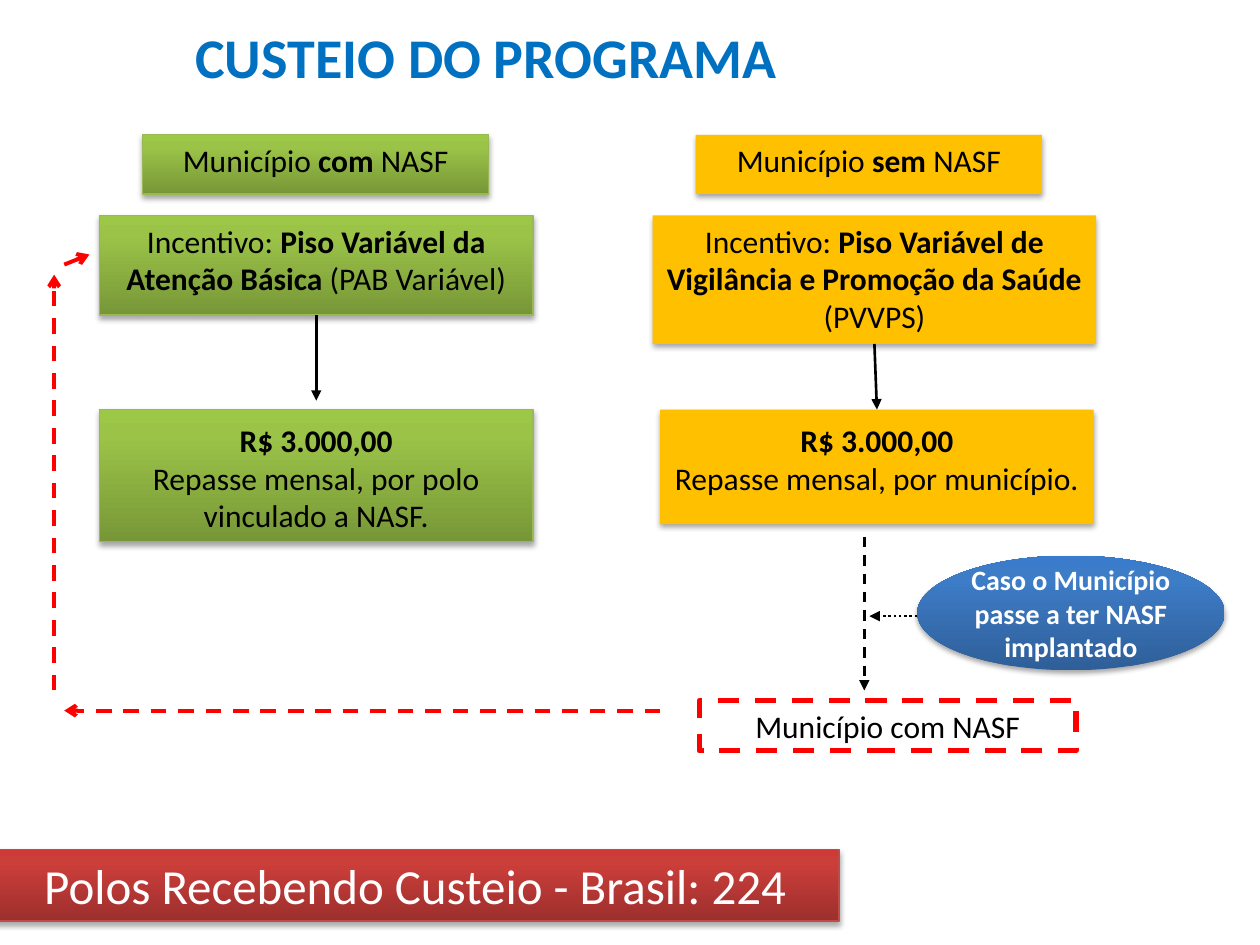
from copy import deepcopy

from pptx import Presentation
from pptx.dml.color import RGBColor
from pptx.enum.dml import MSO_LINE
from pptx.enum.shapes import MSO_CONNECTOR, MSO_SHAPE
from pptx.enum.text import MSO_ANCHOR, PP_ALIGN
from pptx.oxml import parse_xml
from pptx.oxml.ns import nsdecls, qn
from pptx.util import Inches, Pt

RECT, OVAL = MSO_SHAPE.RECTANGLE, MSO_SHAPE.OVAL
STRAIGHT = MSO_CONNECTOR.STRAIGHT
DASH, DOT = MSO_LINE.DASH, MSO_LINE.ROUND_DOT
TOP, MIDDLE = MSO_ANCHOR.TOP, MSO_ANCHOR.MIDDLE
CENTER = PP_ALIGN.CENTER
SITE_TOP, SITE_BOTTOM = 0, 2

BLACK, WHITE, RED, TITLE_BLUE = "000000", "FFFFFF", "FF0000", "0070C0"
AMBER = "FFC000"
GREEN = ("779737", "9BC348", "9DC746")
BLUE = ("2F5F99", "3D7CC7", "3A7CCB")
CRIMSON = ("9C2F2D", "CB3E3A", "CE3B37")
STOPS = (0, 0.8, 1)


def rgb(value):
    return RGBColor.from_string(value)


def write(shape, paragraphs, size=18, color=BLACK, anchor=TOP,
          insets=(0.1, 0.05, 0.1, 0.05)):
    """Fill a shape with paragraphs, each a list of (text, bold) runs."""
    tf = shape.text_frame
    tf.word_wrap = True
    tf.vertical_anchor = anchor
    tf.margin_left, tf.margin_top, tf.margin_right, tf.margin_bottom = map(Inches, insets)
    for i, runs in enumerate(paragraphs):
        p = tf.add_paragraph() if i else tf.paragraphs[0]
        p.alignment = CENTER
        for text, bold in runs:
            r = p.add_run()
            r.text = text
            r.font.name = "Calibri"
            r.font.size = Pt(size)
            r.font.bold = bold
            r.font.color.rgb = rgb(color)


def paint(sp, fill):
    """Fill with one colour, a bottom-to-top gradient, or nothing."""
    if fill is None:
        sp.fill.background()
    elif isinstance(fill, str):
        sp.fill.solid()
        sp.fill.fore_color.rgb = rgb(fill)
    else:
        sp.fill.gradient()
        sp.fill.gradient_angle = 90
        stops = sp._element.spPr.find(".//" + qn("a:gsLst"))
        stops.append(deepcopy(stops[0]))
        for stop, position, color in zip(sp.fill.gradient_stops, STOPS, fill):
            stop.position = position
            stop.color.rgb = rgb(color)


def add_box(s, box, paragraphs, fill=None, line=None, width=0.75, dash=None,
            kind=RECT, shadow=True, **text_format):
    sp = s.shapes.add_shape(kind, *map(Inches, box))
    paint(sp, fill)
    if line:
        sp.line.color.rgb = rgb(line)
        sp.line.width = Pt(width)
        sp.line.dash_style = dash
    else:
        sp.line.fill.background()
    sp.shadow.inherit = False
    if shadow:
        sp._element.spPr.find(qn("a:effectLst")).append(parse_xml(
            f'<a:outerShdw {nsdecls("a")} blurRad="40000" dist="23000" '
            'dir="5400000" rotWithShape="0"><a:srgbClr val="000000">'
            '<a:alpha val="35000"/></a:srgbClr></a:outerShdw>'))
    write(sp, paragraphs, **text_format)
    return sp


def add_arrow(s, start, end, color=BLACK, width=1.5, dash=None, head="triangle"):
    c = s.shapes.add_connector(STRAIGHT, *map(Inches, (*start, *end)))
    c.line.color.rgb = rgb(color)
    c.line.width = Pt(width)
    c.line.dash_style = dash
    c.line._get_or_add_ln().append(
        parse_xml(f'<a:tailEnd {nsdecls("a")} type="{head}"/>'))
    c._element.spPr.append(parse_xml(f'<a:effectLst {nsdecls("a")}/>'))
    return c


def add_column(s, left, top, width, kind, incentive, incentive_h, transfer,
               transfer_h, transfer_dx=0, arrow_gap=0, **style):
    """Header, incentive and transfer boxes, with an arrow between the last two."""
    add_box(s, (left + 0.34, top, 2.75, 0.47),
            [[("Município ", False), (kind, True), (" NASF", False)]], **style)
    source = add_box(s, (left, top + 0.64, width, incentive_h), [incentive], **style)
    target_x, target_y = left + transfer_dx, top + 2.18
    target = add_box(s, (target_x, target_y, 3.44, transfer_h),
                     [[("R$ 3.000,00", True)], [(transfer, False)]],
                     insets=(0.1, 0.09, 0.1, 0.05), **style)
    arrow = add_arrow(s, (left + width / 2, top + 0.64 + incentive_h),
                      (target_x + 1.72, target_y - arrow_gap))
    arrow.begin_connect(source, SITE_BOTTOM)
    if not arrow_gap:
        arrow.end_connect(target, SITE_TOP)


def add_transition(s, left, top):
    """The change of a municipality that comes to have NASF."""
    add_arrow(s, (left, top), (left, top + 1.22), dash=DASH)
    add_box(s, (left + 0.42, top + 0.15, 2.44, 0.91),
            [[("Caso o Município passe a ter NASF implantado", True)]], fill=BLUE,
            kind=OVAL, size=16, color=WHITE, anchor=MIDDLE,
            insets=(0.02, 0.05, 0.02, 0.05))
    add_arrow(s, (left + 0.42, top + 0.63), (left + 0.04, top + 0.63), dash=DOT)
    add_box(s, (left - 1.31, top + 1.3, 2.99, 0.4), [[("Município com NASF", False)]],
            line=RED, width=3, dash=DASH, shadow=False)


def add_return_path(s):
    for start, end in (((5.24, 5.64), (0.51, 5.64)),
                       ((0.43, 5.48), (0.43, 2.18)),
                       ((0.51, 2.1), (0.71, 2.02))):
        add_arrow(s, start, end, color=RED, width=2.25, dash=DASH, head="arrow")


def add_title(s, box):
    write(s.shapes.add_textbox(*map(Inches, box)), [[("CUSTEIO DO PROGRAMA", True)]],
          size=32, color=TITLE_BLUE)


def add_total(s, box):
    add_box(s, box, [[("Polos Recebendo Custeio - Brasil: 224", False)]],
            fill=CRIMSON, line="BF4C48", size=28, color=WHITE, anchor=MIDDLE)


def main():
    prs = Presentation()
    prs.slide_width, prs.slide_height = Inches(10), Inches(7.5)
    s = prs.slides.add_slide(prs.slide_layouts[6])
    add_title(s, (-0.04, 0.13, 7.8, 0.64))
    add_column(s, 0.79, 1.07, 3.44, "com",
               [("Incentivo: ", False), ("Piso Variável da Atenção Básica ", True),
                ("(PAB Variável)", False)], 0.79,
               "Repasse mensal, por polo vinculado a NASF.", 1.05,
               arrow_gap=0.07, fill=GREEN, line="98B955")
    add_column(s, 5.18, 1.07, 3.52, "sem",
               [("Incentivo: ", False),
                ("Piso Variável de Vigilância e Promoção da Saúde", True),
                (" (PVVPS)", False)], 1.02,
               "Repasse mensal, por município.", 0.91,
               transfer_dx=0.06, fill=AMBER)
    add_transition(s, 6.86, 4.26)
    add_return_path(s)
    add_total(s, (-0.07, 6.74, 6.73, 0.57))
    prs.save("out.pptx")


if __name__ == "__main__":
    main()
